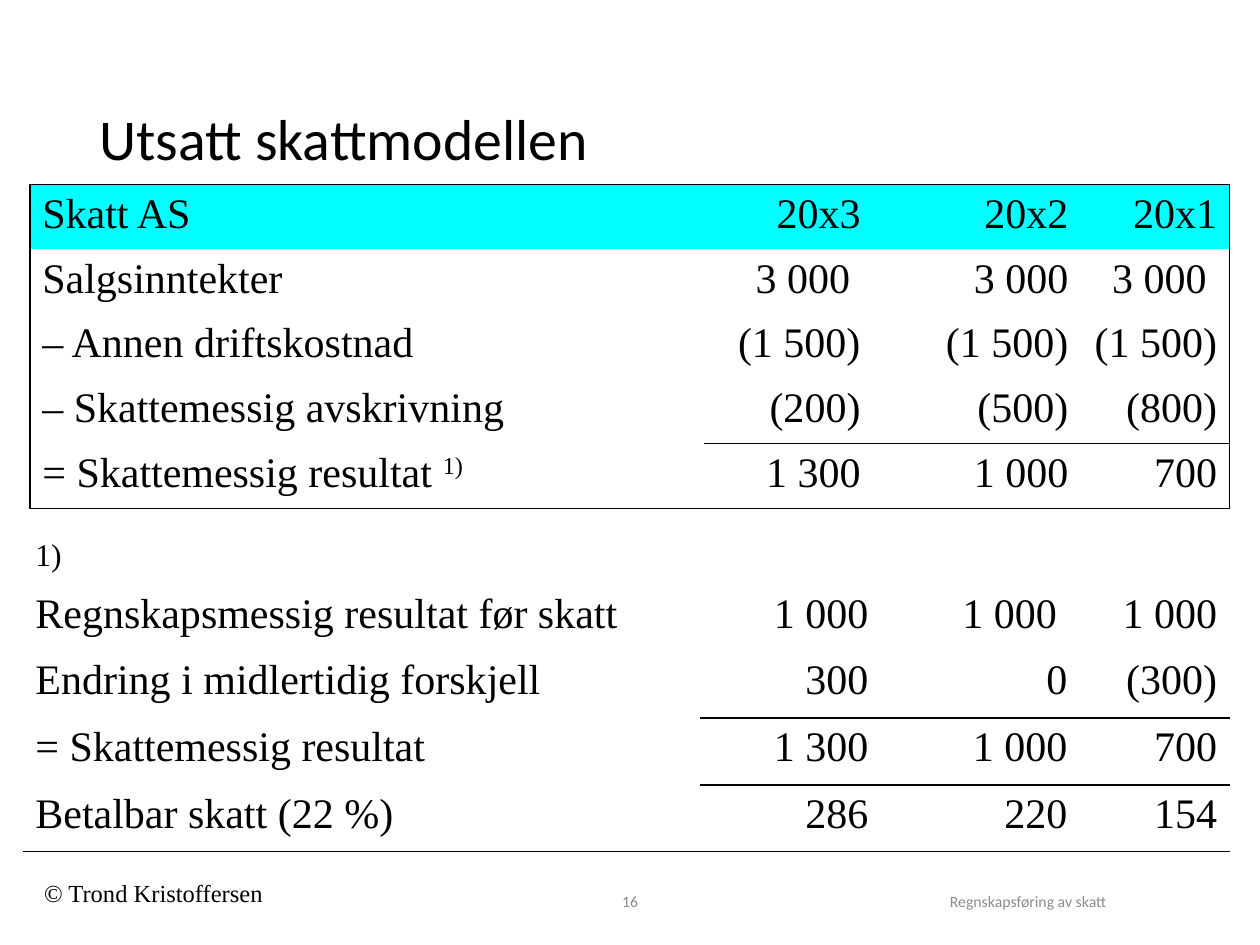
import pptx
import pptx.util
import pptx.dml.color
import pptx.enum.text
import pptx.oxml
import pptx.oxml.ns
from lxml import etree

Cm, Pt = pptx.util.Cm, pptx.util.Pt
PP_ALIGN = pptx.enum.text.PP_ALIGN
ANCHOR = pptx.enum.text.MSO_ANCHOR
BLACK = pptx.dml.color.RGBColor(0x00, 0x00, 0x00)
GREY = pptx.dml.color.RGBColor(0x8C, 0x8C, 0x8C)
CYAN = pptx.dml.color.RGBColor(0x00, 0xFF, 0xFF)
SERIF, SANS = "Times New Roman", "Calibri"
NO_STYLE = "{2D5ABB26-0587-4C30-8999-92F81FD0307C}"

TAX_ROWS = [
    ("Skatt AS", "20x3", "20x2", "20x1"),
    ("Salgsinntekter", "3 000 ", "3 000", "3 000 "),
    ("– Annen driftskostnad", "(1 500)", "(1 500)", "(1 500)"),
    ("– Skattemessig avskrivning", "(200)", "(500)", "(800)"),
    ("= Skattemessig resultat ", "1 300", "1 000", "700"),
]
NOTE_ROWS = [
    ("1)", "", "", ""),
    ("Regnskapsmessig resultat før skatt", "1 000", "1 000 ", "1 000"),
    ("Endring i midlertidig forskjell", "300", "0", "(300)"),
    ("= Skattemessig resultat", "1 300", "1 000", "700"),
    ("Betalbar skatt (22 %)", "286", "220", "154"),
]


def add_run(p, text, size, font, color=BLACK):
    r = p.add_run()
    r.text = text
    r.font.size, r.font.name = Pt(size), font
    r.font.color.rgb = color
    return r


def add_text(s, box, text, size, font, color=BLACK,
             align=PP_ALIGN.LEFT, anchor=ANCHOR.MIDDLE):
    tf = s.shapes.add_textbox(*map(Cm, box)).text_frame
    tf.word_wrap, tf.vertical_anchor = True, anchor
    tf.paragraphs[0].alignment = align
    add_run(tf.paragraphs[0], text, size, font, color)


def set_borders(cell, sides):
    """Draw 1 pt black lines on the sides named by the letters L, R, T, B."""
    tcPr = cell._tc.get_or_add_tcPr()
    for i, side in enumerate(c for c in "LRTB" if c in sides):
        ln = pptx.oxml.parse_xml(
            f'<a:ln{side} {pptx.oxml.ns.nsdecls("a")} w="{Pt(1)}"><a:solidFill>'
            f'<a:srgbClr val="{BLACK}"/></a:solidFill></a:ln{side}>')
        tcPr.insert(i, ln)


def add_grid(s, box, widths, heights):
    """Add a table without style, with columns and rows in cm."""
    table = s.shapes.add_table(len(heights), len(widths), *map(Cm, box)).table
    table.first_row = table.horz_banding = False
    style = table._tbl.tblPr.find(pptx.oxml.ns.qn("a:tableStyleId"))
    style.text = NO_STYLE
    for column, width in zip(table.columns, widths):
        column.width = Cm(width)
    for row, height in zip(table.rows, heights):
        row.height = Cm(height)
    return table


def fill_cell(cell, text, size, is_number):
    cell.fill.background()
    p = cell.text_frame.paragraphs[0]
    p.alignment = PP_ALIGN.RIGHT if is_number else PP_ALIGN.LEFT
    if text:
        add_run(p, text, size, SERIF)
    return p


def add_title(s, box, text):
    title = s.shapes.title
    title.left, title.top, title.width, title.height = map(Cm, box)
    tf = title.text_frame
    tf.vertical_anchor = ANCHOR.MIDDLE
    p = tf.paragraphs[0]
    p.alignment, p.line_spacing = PP_ALIGN.LEFT, 0.9
    add_run(p, text, 33, SANS)


def add_tax_table(s, box):
    last = len(TAX_ROWS) - 1
    table = add_grid(s, box, [13.6, 3.4, 4.19, 3.0], [box[3] / (last + 1)] * (last + 1))
    for i, row in enumerate(TAX_ROWS):
        for j, text in enumerate(row):
            cell = table.cell(i, j)
            p = fill_cell(cell, text, 24, j > 0)
            if i == 0:
                cell.fill.solid()
                cell.fill.fore_color.rgb = CYAN
            if (i, j) == (last, 0):
                add_run(p, "1)", 24, SERIF).font._element.set("baseline", "30000")
            # Outer frame, and a sum line above the result
            sides = {0: "L", 3: "R"}.get(j, "") + {0: "T", last: "B"}.get(i, "")
            if j > 0:
                sides += {last - 1: "B", last: "T"}.get(i, "")
            set_borders(cell, sides)


def add_note_table(s, box):
    first, other = 1.06, (box[3] - 1.06) / 4
    table = add_grid(s, box, [12.12, 1.54, 2.57, 1.07, 2.97, 1.04, 3.02],
                     [first] + [other] * 4)
    for i, row in enumerate(NOTE_ROWS):
        # Column pairs start at 1 in the note row and at 0 in the others
        starts = [0, 1, 3, 5] if i == 0 else [0, 2, 4, 6]
        for j, (start, end) in enumerate(zip(starts, starts[1:] + [7])):
            cell = table.cell(i, start)
            if end - start > 1:
                cell.merge(table.cell(i, end - 1))
            fill_cell(cell, row[j], 18 if i == 0 else 24, j > 0)
            sides = "B" if i == 4 or (i >= 2 and j > 0) else ""
            if i >= 3 and j > 0:
                sides += "T"
            for column in range(start, end):
                set_borders(table.cell(i, column), sides)


def add_footer(s, box):
    left, top, width, height = box
    add_text(s, (left, top, 5.28, 0.84), "© Trond Kristoffersen", 14, SERIF,
             anchor=ANCHOR.TOP)
    add_text(s, (left + 7.77, top + 0.07, 8.59, 1.02), "16", 9, SANS, GREY,
             PP_ALIGN.CENTER)
    add_text(s, (left + width - 5.72, top + 0.07, 5.72, 1.02),
             "Regnskapsføring av skatt", 9, SANS, GREY)


def main():
    prs = pptx.Presentation()
    prs.slide_width, prs.slide_height = Cm(25.4), Cm(19.05)
    s = prs.slides.add_slide(prs.slide_layouts[5])
    add_title(s, (1.75, 1.02, 21.9, 3.68), "Utsatt skattmodellen")
    add_tax_table(s, (0.6, 3.72, 24.19, 6.53))
    add_note_table(s, (0.46, 10.72, 24.33, 6.45))
    add_footer(s, (0.64, 17.58, 23.98, 1.09))
    prs.save("out.pptx")


if __name__ == "__main__":
    main()
